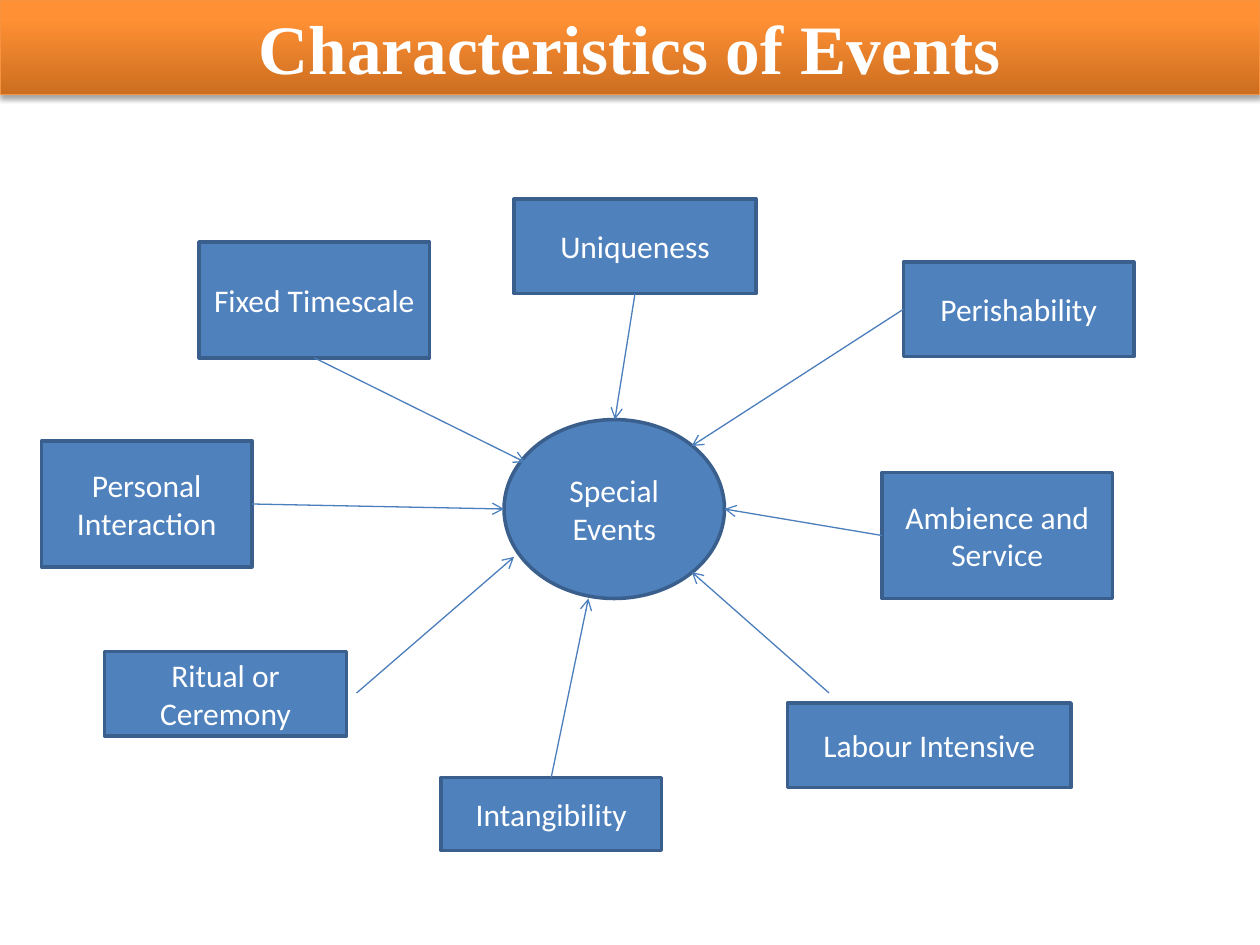
from pptx import Presentation
from pptx.dml.color import RGBColor
from pptx.enum.shapes import MSO_CONNECTOR, MSO_SHAPE
from pptx.enum.text import MSO_ANCHOR, MSO_AUTO_SIZE, PP_ALIGN
from pptx.oxml import parse_xml
from pptx.oxml.ns import nsdecls, qn
from pptx.util import Inches, Pt
from lxml import etree

RECT, OVAL = MSO_SHAPE.RECTANGLE, MSO_SHAPE.OVAL
STRAIGHT = MSO_CONNECTOR.STRAIGHT
MIDDLE, CENTER = MSO_ANCHOR.MIDDLE, PP_ALIGN.CENTER
TOP, LEFT, BOTTOM, RIGHT = range(4)

WHITE = RGBColor(0xFF, 0xFF, 0xFF)
BLUE = RGBColor(0x4F, 0x81, 0xBD)
DARK_BLUE = RGBColor(0x3A, 0x5F, 0x8C)
ARROW_BLUE = RGBColor(0x4B, 0x7E, 0xBC)
ORANGE_EDGE = RGBColor(0xF6, 0x92, 0x40)
BANNER_STOPS = [
    (0, RGBColor(0xCC, 0x6E, 0x20)),
    (80, RGBColor(0xFF, 0x90, 0x34)),
    (100, RGBColor(0xFF, 0x91, 0x36)),
]

# Label, place (left, top, width, height), side the arrow leaves, or its free
# starting point, and the arrow's end on the hub
CHARACTERISTICS = [
    ("Uniqueness", (4.08, 1.58, 1.92, 0.75), BOTTOM, (4.88, 3.33)),
    ("Perishability", (7.17, 2.08, 1.83, 0.75), LEFT, (5.49, 3.54)),
    ("Ambience and Service", (7, 3.75, 1.83, 1), LEFT, (5.75, 4.04)),
    ("Labour Intensive", (6.25, 5.58, 2.25, 0.67), (6.58, 5.5), (5.49, 4.54)),
    ("Intangibility", (3.5, 6.17, 1.75, 0.58), TOP, (4.67, 4.75)),
    ("Ritual or Ceremony", (0.83, 5.17, 1.92, 0.67), (2.83, 5.5), (4.08, 4.42)),
    ("Personal Interaction", (0.33, 3.5, 1.67, 1), RIGHT, (4, 4.04)),
    ("Fixed Timescale", (1.58, 1.92, 1.83, 0.92), BOTTOM, (4.17, 3.67)),
]


def write_text(shape, text, font="Calibri", size=18, color=WHITE, bold=False):
    """Fill a shape with centred text, one paragraph for each line."""
    frame = shape.text_frame
    frame.word_wrap = True
    frame.auto_size = MSO_AUTO_SIZE.NONE
    frame.vertical_anchor = MIDDLE
    frame.text = text
    for para in frame.paragraphs:
        para.alignment = CENTER
        for span in para.runs:
            span.font.name = font
            span.font.size = Pt(size)
            span.font.bold = bold
            span.font.color.rgb = color


class EventsSlide:
    def __init__(self, page):
        self.page = page

    def banner(self, text, left, top, width, height):
        title = self.page.shapes.title
        title.left, title.top = Inches(left), Inches(top)
        title.width, title.height = Inches(width), Inches(height)
        write_text(title, text, font="Times New Roman", size=39.6, bold=True)

        # Three-stop gradient, running from bottom to top
        title.fill.gradient()
        title.fill.gradient_angle = 90
        properties = title.element.spPr
        stops = properties.find(".//" + qn("a:gsLst"))
        for stop in list(stops):
            stops.remove(stop)
        for position, color in BANNER_STOPS:
            stop = etree.SubElement(stops, qn("a:gs"), pos=str(position * 1000))
            etree.SubElement(stop, qn("a:srgbClr"), val=str(color))
        title.line.color.rgb = ORANGE_EDGE
        title.line.width = Pt(0.75)

        # Soft shadow below the banner
        properties.append(parse_xml(
            f'<a:effectLst {nsdecls("a")}>'
            f'<a:outerShdw blurRad="{Pt(3.1)}" dist="{Pt(1.8)}" dir="5400000" rotWithShape="0">'
            '<a:srgbClr val="000000"><a:alpha val="35000"/></a:srgbClr>'
            '</a:outerShdw></a:effectLst>'))

    def box(self, text, place, kind=RECT):
        shape = self.page.shapes.add_shape(kind, *map(Inches, place))
        shape.shadow.inherit = False
        shape.fill.solid()
        shape.fill.fore_color.rgb = BLUE
        shape.line.color.rgb = DARK_BLUE
        shape.line.width = Pt(2)
        write_text(shape, text)
        return shape

    def arrow(self, box, start, end):
        """Start is a side of the box or a free point."""
        joined = isinstance(start, int)
        first = end if joined else start
        line = self.page.shapes.add_connector(STRAIGHT, *map(Inches, first + end))
        if joined:
            line.begin_connect(box, start)
        line.line.color.rgb = ARROW_BLUE
        line.line.width = Pt(0.75)
        etree.SubElement(line.line._get_or_add_ln(), qn("a:tailEnd"), type="arrow")
        etree.SubElement(line.element.spPr, qn("a:effectLst"))


def main():
    deck = Presentation()
    deck.slide_width, deck.slide_height = Inches(10), Inches(7.5)
    slide = EventsSlide(deck.slides.add_slide(deck.slide_layouts[5]))

    # Title and hub
    slide.banner("Characteristics of Events", 0, 0, 10, 0.75)
    slide.box("Special\nEvents", (4, 3.33, 1.75, 1.42), kind=OVAL)

    # Characteristics pointing at the hub
    for label, place, start, end in CHARACTERISTICS:
        box = slide.box(label, place)
        slide.arrow(box, start, end)

    deck.save("out.pptx")


if __name__ == "__main__":
    main()
